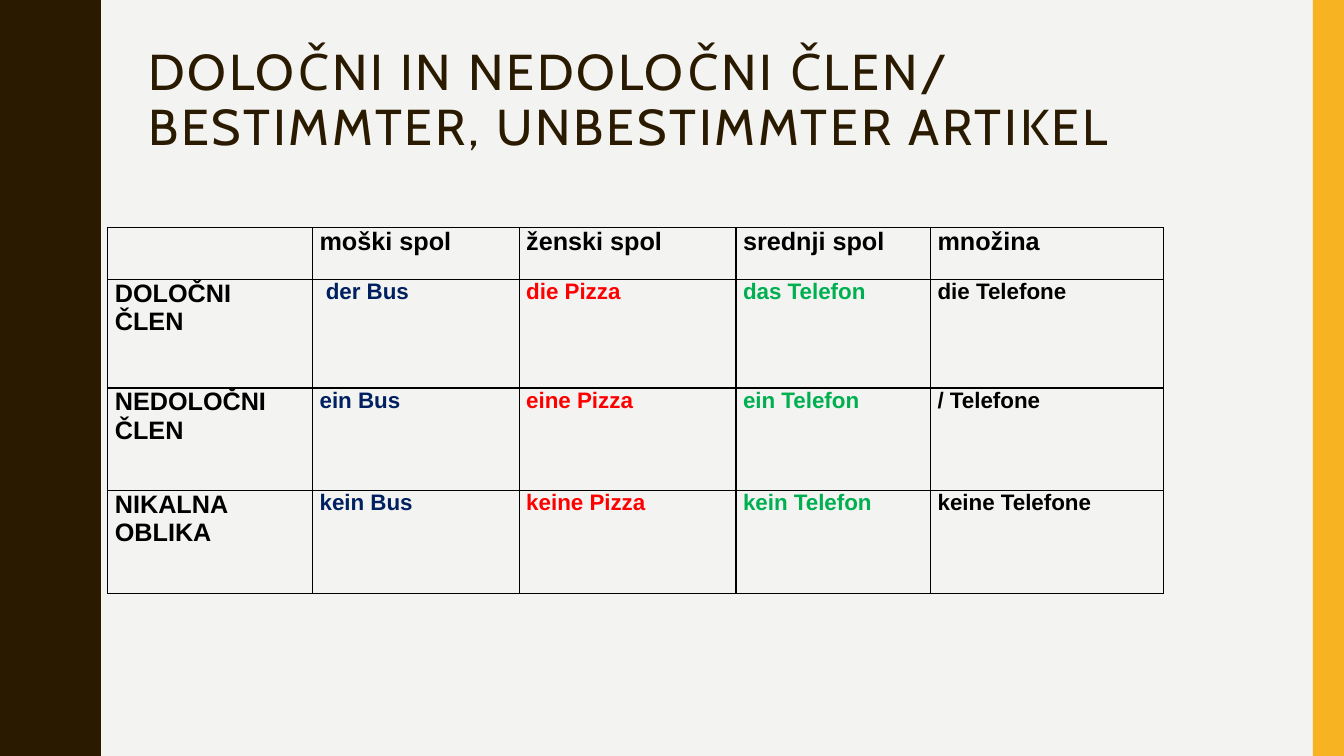
from lxml.etree import SubElement
from pptx import Presentation
from pptx.dml.color import RGBColor
from pptx.enum.shapes import MSO_SHAPE
from pptx.enum.text import MSO_ANCHOR, MSO_AUTO_SIZE, PP_ALIGN
from pptx.oxml.ns import qn
from pptx.util import Inches, Pt

COLORS = {
    "background": "F3F3F2",
    "brown": "2A1A00",
    "gold": "F8B323",
    "black": "000000",
    "masculine": "002060",
    "feminine": "FF0000",
    "neuter": "00B050",
}
HALF_WAVE = [
    (0.78, 0), (0.78, 0.07), (0.79, 0.14), (0.8, 0.2), (0.81, 0.25),
    (0.83, 0.29), (0.85, 0.33), (0.87, 0.38), (0.89, 0.42), (0.91, 0.46),
    (0.93, 0.5), (0.95, 0.55), (0.96, 0.61), (0.97, 0.68), (0.97, 0.75),
]
WAVE_HEIGHT = 1.5
WAVE_COUNT = 5
COLUMN_WIDTHS = [2.03, 2.05, 2.15, 1.93, 2.31]
ROW_HEIGHTS = [0.51, 1.08, 1.02, 1.02]
COLUMN_COLORS = ["black", "masculine", "feminine", "neuter", "black"]
ARTICLES = [
    ["", "moški spol", "ženski spol", "srednji spol", "množina"],
    ["DOLOČNI ČLEN", " der Bus", "die Pizza", "das Telefon", "die Telefone"],
    ["NEDOLOČNI ČLEN", "ein Bus", "eine Pizza", "ein Telefon", "/ Telefone"],
    ["NIKALNA OBLIKA", "kein Bus", "keine Pizza", "kein Telefon", "keine Telefone"],
]


def color(name):
    return RGBColor.from_string(COLORS[name])


def apply(target, values):
    for name, value in values.items():
        setattr(target, name, value)


class ArticleSlide:
    title_font = {"name": "Cabin", "size": Pt(36), "bold": False}
    heading_font = {"name": "Arial", "size": Pt(18), "bold": True}
    example_font = {"name": "Arial", "size": Pt(16), "bold": True}
    cell_margins = {
        "margin_left": Inches(0.07), "margin_right": Inches(0.07),
        "margin_top": 0, "margin_bottom": 0,
    }

    def __init__(self, deck):
        self.page = deck.slides.add_slide(deck.slide_layouts[5])
        fill = self.page.background.fill
        fill.solid()
        fill.fore_color.rgb = color("background")

    def paint(self, shape, name):
        shape.shadow.inherit = False
        shape.fill.solid()
        shape.fill.fore_color.rgb = color(name)
        shape.line.fill.background()

    def wave(self):
        full_wave = HALF_WAVE + [(x, WAVE_HEIGHT - y) for x, y in HALF_WAVE[-2::-1]]
        edge = [(x, y + WAVE_HEIGHT * index)
                for index in range(WAVE_COUNT) for x, y in full_wave]
        builder = self.page.shapes.build_freeform(0, 0, scale=Inches(1))
        builder.add_line_segments(edge + [(0, WAVE_HEIGHT * WAVE_COUNT)], close=True)
        self.paint(builder.convert_to_shape(), "brown")

    def stripe(self, left, top, width, height):
        bounds = map(Inches, (left, top, width, height))
        self.paint(self.page.shapes.add_shape(MSO_SHAPE.RECTANGLE, *bounds), "gold")

    def title(self, text, left, top, width, height):
        box = self.page.shapes.title
        apply(box, {"left": Inches(left), "top": Inches(top),
                    "width": Inches(width), "height": Inches(height)})
        apply(box.text_frame, {"text": text, "word_wrap": True,
                               "auto_size": MSO_AUTO_SIZE.NONE,
                               "vertical_anchor": MSO_ANCHOR.TOP})
        para = box.text_frame.paragraphs[0]
        apply(para, {"alignment": PP_ALIGN.LEFT, "line_spacing": 0.9})
        span = para.runs[0]
        apply(span.font, self.title_font)
        span.font.color.rgb = color("brown")
        span.font._element.set("spc", "200")

    def borders(self, cell):
        properties = cell._tc.get_or_add_tcPr()
        for side in ("a:lnL", "a:lnR", "a:lnT", "a:lnB"):
            line = SubElement(properties, qn(side), w=str(Pt(1)))
            fill = SubElement(line, qn("a:solidFill"))
            SubElement(fill, qn("a:srgbClr"), val=COLORS["black"])

    def cell(self, cell, text, font, color_name):
        apply(cell, self.cell_margins)
        self.borders(cell)
        cell.fill.background()
        cell.text = text
        para = cell.text_frame.paragraphs[0]
        apply(para.font, font)
        for span in para.runs:
            apply(span.font, font)
            span.font.color.rgb = color(color_name)

    def table(self, rows, left, top):
        table = self.page.shapes.add_table(
            len(rows), len(COLUMN_WIDTHS), Inches(left), Inches(top),
            Inches(sum(COLUMN_WIDTHS)), Inches(sum(ROW_HEIGHTS))).table
        apply(table, {"first_row": False, "horz_banding": False})
        for column, width in zip(table.columns, COLUMN_WIDTHS):
            column.width = Inches(width)
        for row, height in zip(table.rows, ROW_HEIGHTS):
            row.height = Inches(height)
        for row_index, row in enumerate(rows):
            for column_index, text in enumerate(row):
                heading = row_index == 0 or column_index == 0
                self.cell(table.cell(row_index, column_index), text,
                          self.heading_font if heading else self.example_font,
                          "black" if heading else COLUMN_COLORS[column_index])


def main():
    deck = Presentation()
    apply(deck, {"slide_width": Inches(13.33), "slide_height": Inches(7.5)})
    slide = ArticleSlide(deck)
    slide.wave()
    slide.stripe(13.02, 0, 0.31, 7.5)
    slide.title("DOLOČNI IN NEDOLOČNI ČLEN/ BESTIMMTER, UNBESTIMMTER ARTIKEL",
                1.37, 0.42, 11.13, 1.63)
    slide.table(ARTICLES, 1.07, 2.26)
    deck.save("out.pptx")


if __name__ == "__main__":
    main()
